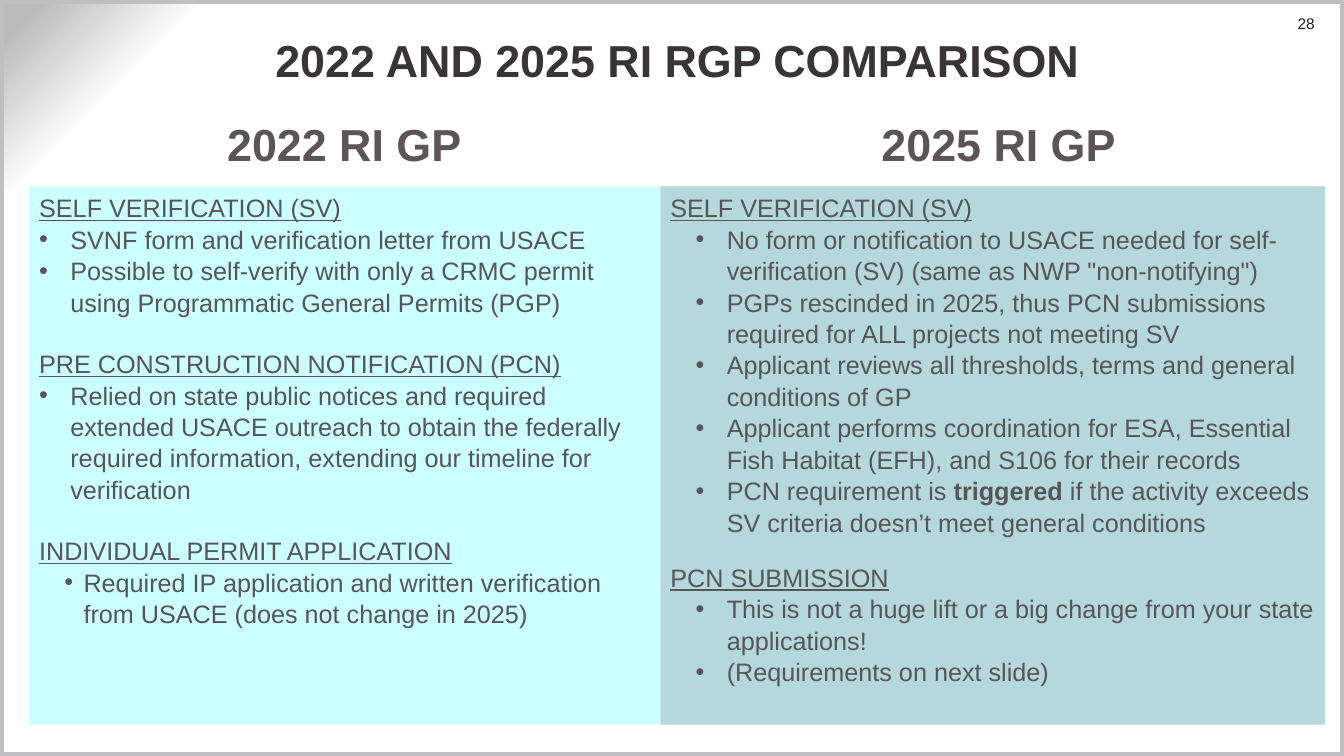
from lxml import etree
from pptx import Presentation
from pptx.dml.color import RGBColor
from pptx.enum.shapes import MSO_SHAPE as Shape
from pptx.enum.text import MSO_ANCHOR as Anchor, MSO_AUTO_SIZE as AutoSize, PP_ALIGN as Align
from pptx.oxml import parse_xml
from pptx.oxml.ns import nsdecls, qn
from pptx.util import Inches, Pt

TITLE_INK = RGBColor(0x39, 0x34, 0x36)
HEADING_INK = RGBColor(0x5C, 0x54, 0x57)
BODY_INK = RGBColor(0x56, 0x55, 0x57)
NUMBER_INK = RGBColor(0x22, 0x1F, 0x20)
FRAME_GREY = RGBColor(0xBF, 0xBF, 0xC2)
CORNER_GREY = RGBColor(0xBB, 0xBB, 0xBC)
WHITE = RGBColor(0xFF, 0xFF, 0xFF)
PALE_CYAN = RGBColor(0xCC, 0xFF, 0xFF)
SOFT_TEAL = RGBColor(0xB5, 0xD8, 0xDD)

GLOW_STOPS = [(87, WHITE), (90, WHITE), (98, CORNER_GREY)]
BULLETS = {"flush": (0, 0.31, 0.31), "tight": (1, 0.44, 0.19), "inset": (1, 0.56, 0.31)}

COLUMNS = [
    {
        "heading": "2022 RI GP", "heading_box": (0.29, 0.96, 6.25, 0.73),
        "panel_box": (0.29, 1.85, 6.26, 5.34), "fill": PALE_CYAN, "gap": 21.5,
        "sections": [
            ("SELF VERIFICATION (SV)", "flush", [
                "SVNF form and verification letter from USACE",
                "Possible to self-verify with only a CRMC permit using Programmatic General Permits (PGP)",
            ]),
            ("PRE CONSTRUCTION NOTIFICATION (PCN)", "flush", [
                "Relied on state public notices and required extended USACE outreach to obtain "
                "the federally required information, extending our timeline for verification",
            ]),
            ("INDIVIDUAL PERMIT APPLICATION", "tight", [
                "Required IP application and written verification from USACE (does not change in 2025)",
            ]),
        ],
    },
    {
        "heading": "2025 RI GP", "heading_box": (6.78, 0.96, 6.25, 0.73),
        "panel_box": (6.55, 1.85, 6.59, 5.34), "fill": SOFT_TEAL, "gap": 17,
        "sections": [
            ("SELF VERIFICATION (SV)", "inset", [
                'No form or notification to USACE needed for self-verification (SV) (same as NWP "non-notifying")',
                "PGPs rescinded in 2025, thus PCN submissions required for ALL projects not meeting SV",
                "Applicant reviews all thresholds, terms and general conditions of GP",
                "Applicant performs coordination for ESA, Essential Fish Habitat (EFH), and S106 for their records",
                "PCN requirement is **triggered** if the activity exceeds SV criteria doesn’t meet general conditions",
            ]),
            ("PCN SUBMISSION", "inset", [
                "This is not a huge lift or a big change from your state applications!",
                "(Requirements on next slide)",
            ]),
        ],
    },
]


def set_values(target, values):
    for name, value in values.items():
        setattr(target, name, value)


def lengths(box):
    return [Inches(value) for value in box]


def prepare_frame(shape, margins, anchor):
    frame = shape.text_frame
    names = ("margin_left", "margin_top", "margin_right", "margin_bottom")
    set_values(frame, dict(zip(names, lengths(margins))))
    set_values(frame, {"word_wrap": True, "auto_size": AutoSize.NONE, "vertical_anchor": anchor})
    return frame


def add_span(para, text, size, ink, bold=False, underline=False):
    span = para.add_run()
    span.text = text
    set_values(span.font, {"name": "Arial", "size": Pt(size), "bold": bold, "underline": underline})
    span.font.color.rgb = ink


def write_line(shape, text, margins, anchor, align, size, ink, bold=True):
    para = prepare_frame(shape, margins, anchor).paragraphs[0]
    set_values(para, {"alignment": align, "line_spacing": 1.0, "space_before": Pt(0)})
    add_span(para, text, size, ink, bold)


def add_bullet(para, style):
    level, left, hang = BULLETS[style]
    para.level = level
    props = para._p.get_or_add_pPr()
    props.set("marL", str(Inches(left)))
    props.set("indent", str(-Inches(hang)))
    etree.SubElement(props, qn("a:buFont")).set("typeface", "Arial")
    etree.SubElement(props, qn("a:buChar")).set("char", "•")


def paint_background(page):
    page.background.fill.solid()
    holder = page.element.find(".//" + qn("p:bgPr"))
    stops = "".join(
        f'<a:gs pos="{place * 1000}"><a:srgbClr val="{colour}"/></a:gs>' for place, colour in GLOW_STOPS
    )
    glow = parse_xml(
        f'<a:gradFill {nsdecls("a")} rotWithShape="1"><a:gsLst>{stops}</a:gsLst>'
        '<a:path path="circle"><a:fillToRect l="100000" t="100000"/></a:path></a:gradFill>'
    )
    holder.replace(holder.find(qn("a:solidFill")), glow)


def add_border(page, box):
    border = page.shapes.add_shape(Shape.RECTANGLE, *lengths(box))
    border.shadow.inherit = False
    border.fill.background()
    border.line.color.rgb = FRAME_GREY
    border.line.width = Pt(6)


def add_page_number(page, box, number):
    label = page.shapes.add_textbox(*lengths(box))
    write_line(label, number, (0.1, 0, 0, 0), Anchor.TOP, Align.RIGHT, 11, NUMBER_INK, False)


def place_title(page, box, text):
    title = page.shapes.title
    set_values(title, dict(zip(("left", "top", "width", "height"), lengths(box))))
    write_line(title, text, (0.05, 0, 0.05, 0), Anchor.MIDDLE, Align.CENTER, 32, TITLE_INK)


def add_heading(page, box, text):
    heading = page.shapes.add_textbox(*lengths(box))
    write_line(heading, text, (0.1, 0.05, 0.1, 0), Anchor.BOTTOM, Align.CENTER, 32, HEADING_INK)


def add_panel(page, box, fill, gap, sections):
    panel = page.shapes.add_shape(Shape.RECTANGLE, *lengths(box))
    panel.shadow.inherit = False
    panel.fill.solid()
    panel.fill.fore_color.rgb = fill
    panel.line.fill.background()
    frame = prepare_frame(panel, (0.1, 0.05, 0.1, 0.05), Anchor.TOP)
    for index, (heading, style, items) in enumerate(sections):
        para = frame.add_paragraph() if index else frame.paragraphs[0]
        before = Pt(gap if index else 0)
        set_values(para, {"alignment": Align.LEFT, "line_spacing": 1.04, "space_before": before})
        add_span(para, heading, 18, BODY_INK, underline=True)
        for item in items:
            para = frame.add_paragraph()
            add_bullet(para, style)
            set_values(para, {"alignment": Align.LEFT, "line_spacing": 1.04, "space_before": Pt(0)})
            for part, text in enumerate(item.split("**")):
                add_span(para, text, 18, BODY_INK, bold=part % 2 == 1)


def build_comparison(deck):
    page = deck.slides.add_slide(deck.slide_layouts[5])
    paint_background(page)
    add_border(page, (0, 0, 13.33, 7.5))
    add_page_number(page, (12.44, 0.14, 0.6, 0.19), "28")
    place_title(page, (1.04, 0.14, 11.36, 0.91), "2022 AND 2025 RI RGP COMPARISON")
    for column in COLUMNS:
        add_heading(page, column["heading_box"], column["heading"])
        add_panel(page, column["panel_box"], column["fill"], column["gap"], column["sections"])


def main():
    deck = Presentation()
    set_values(deck, {"slide_width": Inches(13.33), "slide_height": Inches(7.5)})
    build_comparison(deck)
    deck.save("out.pptx")


if __name__ == "__main__":
    main()
